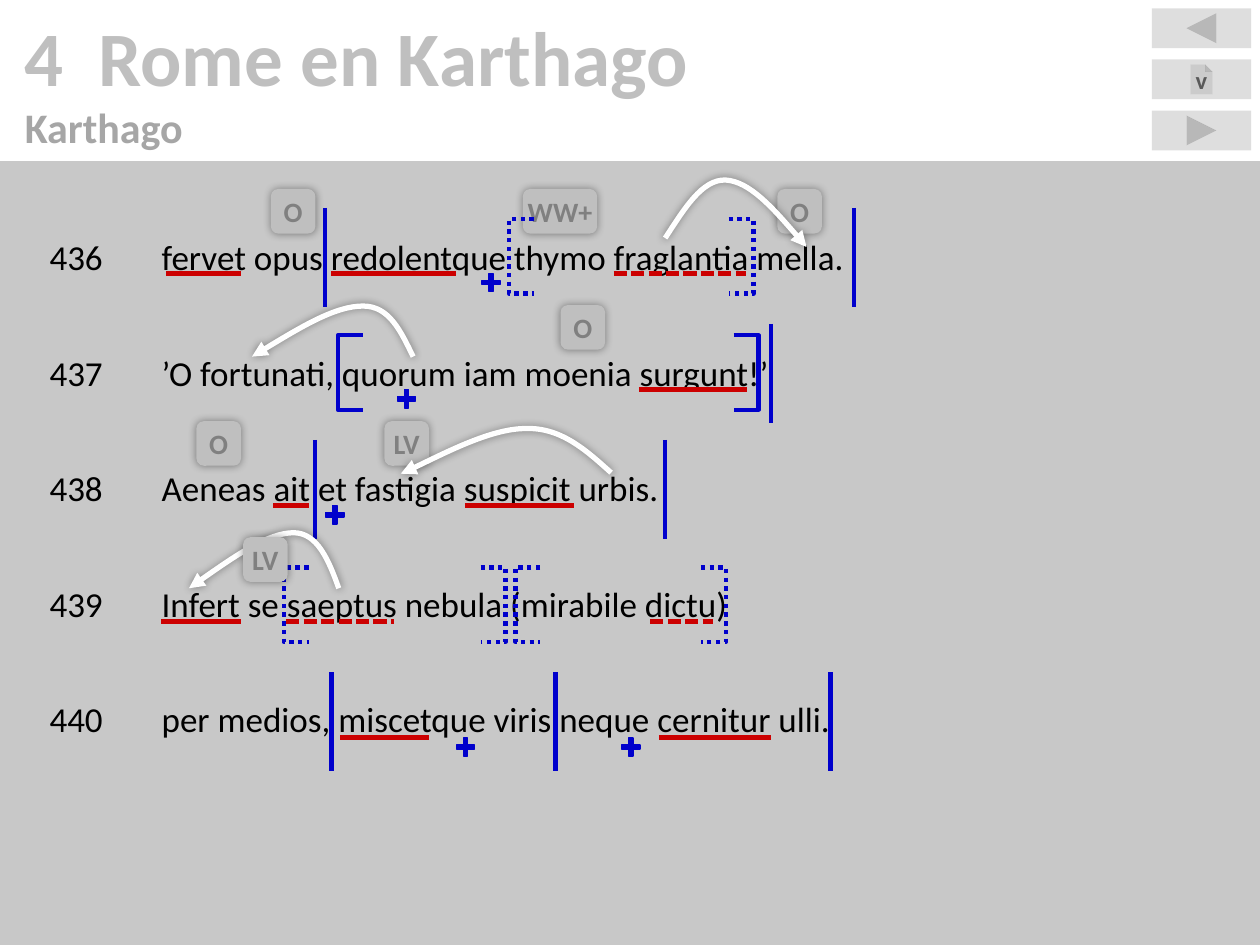
from lxml.etree import SubElement
from pptx import Presentation
from pptx.dml.color import RGBColor
from pptx.enum.dml import MSO_LINE as Dash
from pptx.enum.shapes import MSO_CONNECTOR as Connector, MSO_SHAPE as Preset
from pptx.enum.text import MSO_ANCHOR as Anchor, PP_ALIGN as Align
from pptx.oxml.ns import qn
from pptx.util import Cm, Pt

WHITE = RGBColor(0xFF, 0xFF, 0xFF)
BLACK = RGBColor(0, 0, 0)
SILVER = RGBColor(0xBF, 0xBF, 0xBF)
SUBTITLE_GRAY = RGBColor(0xA6, 0xA6, 0xA6)
BADGE_GRAY = RGBColor(0x80, 0x80, 0x80)
BUTTON_GRAY = RGBColor(0x59, 0x59, 0x59)
BLUE = RGBColor(0, 0, 0xCC)
RED = RGBColor(0xCC, 0, 0)

HEADINGS = [
    ("4  Rome en Karthago", {"size": Pt(44), "color": SILVER, "bold": True}),
    ("Karthago", {"size": Pt(24), "color": SUBTITLE_GRAY, "bold": True}),
]
BUTTONS = [
    (Preset.ACTION_BUTTON_BACK_OR_PREVIOUS, ""),
    (Preset.ACTION_BUTTON_DOCUMENT, "v"),
    (Preset.ACTION_BUTTON_FORWARD_OR_NEXT, ""),
]
VERSES = [
    ("436", "fervet opus redolentque thymo fraglantia mella.", {
        "divider": [(6.55,), (17.22,)],
        "underline": [(3.35, 4.85), (6.68, 9.19), (12.37, 15.04, Dash.SQUARE_DOT)],
        "plus": [(9.65,)],
        "badge": [("O", 5.46), ("O", 15.67), ("WW+", 10.54, 1.5)],
        "brackets": [(10.26, 15.19, Dash.ROUND_DOT)],
        "arrow": [((13.41, 4.8), (13.79, 4.22), (14.15, 3.61), (14.63, 3.63),
                   (15.11, 3.66), (15.7, 4.32), (16.26, 4.98))],
    }),
    ("437", "’O fortunati, quorum iam moenia surgunt!’", {
        "divider": [(15.54,)],
        "underline": [(12.88, 15.06)],
        "brackets": [(6.81, 15.29)],
        "plus": [(7.95,)],
        "arrow": [((8.33, 7.19), (8.08, 6.68), (7.85, 6.17), (7.32, 6.17),
                   (6.76, 6.17), (5.92, 6.68), (5.08, 7.19))],
        "badge": [("O", 11.3)],
    }),
    ("438", "Aeneas ait et fastigia suspicit urbis.", {
        "divider": [(6.35,), (13.41,)],
        "underline": [(5.51, 6.22), (9.37, 11.58)],
        "plus": [(6.5,)],
        "badge": [("O", 3.96), ("LV", 7.75)],
        "arrow": [((12.32, 9.53), (11.81, 9.07), (11.3, 8.61), (10.59, 8.64),
                   (9.88, 8.64), (8.51, 9.37), (8.08, 9.55))],
    }),
    ("439", "Infert se saeptus nebula (mirabile dictu)", {
        "underline": [(3.25, 4.85), (5.77, 7.95, Dash.SQUARE_DOT),
                      (13.11, 14.38, Dash.SQUARE_DOT)],
        "brackets": [(5.72, 10.19, Dash.ROUND_DOT), (10.39, 14.63, Dash.ROUND_DOT)],
        "arrow": [((6.83, 11.86), (6.63, 11.3), (6.4, 10.74), (5.92, 10.74),
                   (5.41, 10.74), (4.6, 11.3), (3.81, 11.86))],
        "badge": [("LV", 4.9)],
    }),
    ("440", "per medios, miscetque viris neque cernitur ulli.", {
        "divider": [(6.68,), (11.2,), (16.74,)],
        "underline": [(6.86, 8.64), (13.28, 15.54)],
        "plus": [(9.14,), (12.47,)],
    }),
]
FIRST_UNDERLINE, VERSE_PITCH = 5.51, 2.34
PANEL_TOP = 3.25

presentation = Presentation()
presentation.slide_width, presentation.slide_height = Cm(25.4), Cm(19.05)
slide = presentation.slides.add_slide(presentation.slide_layouts[6])
shapes = slide.shapes


def set_frame(shape, margins, anchor, wrap=True):
    left, top = margins
    values = {"margin_left": Cm(left), "margin_right": Cm(left),
              "margin_top": Cm(top), "margin_bottom": Cm(top),
              "vertical_anchor": anchor, "word_wrap": wrap}
    for name, value in values.items():
        setattr(shape.text_frame, name, value)


def write(shape, lines, align=Align.LEFT):
    frame = shape.text_frame
    for index, (text, font_values) in enumerate(lines):
        paragraph = frame.add_paragraph() if index else frame.paragraphs[0]
        paragraph.alignment = align
        run = paragraph.add_run()
        run.text = text
        run.font.name = "Calibri"
        for name, value in font_values.items():
            if name == "color":
                run.font.color.rgb = value
            else:
                setattr(run.font, name, value)


def add_filled(preset, left, top, width, height, color, opacity=100):
    shape = shapes.add_shape(preset, Cm(left), Cm(top), Cm(width), Cm(height))
    shape.shadow.inherit = False
    shape.fill.solid()
    shape.fill.fore_color.rgb = color
    shape.line.fill.background()
    if opacity < 100:
        color_element = shape.element.spPr.find(qn("a:solidFill"))[0]
        SubElement(color_element, qn("a:alpha"), val=str(opacity * 1000))
    return shape


def add_glow(shape):
    effects = shape.element.spPr.find(qn("a:effectLst"))
    shadow = SubElement(effects, qn("a:outerShdw"), blurRad=str(Pt(5)), dist="0",
                        dir="0", algn="ctr", rotWithShape="0")
    color = SubElement(shadow, qn("a:srgbClr"), val="000000")
    SubElement(color, qn("a:alpha"), val="40000")


def style_line(shape, color, width=2.5, dash=None):
    shape.line.color.rgb = color
    shape.line.width = Pt(width)
    if dash:
        shape.line.dash_style = dash


def add_line(start, end, color, dash=None):
    line = shapes.add_connector(Connector.STRAIGHT, *map(Cm, start + end))
    style_line(line, color, dash=dash)
    SubElement(line.element.spPr, qn("a:effectLst"))


def add_outline(points, color, width=2.5, dash=None):
    first, *rest = [(Cm(x), Cm(y)) for x, y in points]
    builder = shapes.build_freeform(*first)
    builder.add_line_segments(rest, close=False)
    outline = builder.convert_to_shape()
    outline.shadow.inherit = False
    outline.fill.background()
    style_line(outline, color, width, dash)
    return outline


def add_divider(base, x):
    add_line((x, base - 1.32), (x, base + 0.68), BLUE)


def add_underline(base, left, right, dash=None):
    add_line((left, base), (right, base), RED, dash)


def add_plus(base, left):
    plus = add_filled(Preset.MATH_PLUS, left, base - 0.06, 0.5, 0.5, BLUE)
    plus.adjustments[0] = 0.17
    style_line(plus, BLUE, 0)


def add_badge(base, text, left, width=0.9):
    badge = add_filled(Preset.ROUNDED_RECTANGLE, left, base - 1.7, width, 0.9, SILVER)
    add_glow(badge)
    set_frame(badge, (0, 0), Anchor.MIDDLE, wrap=False)
    write(badge, [(text, {"size": Pt(16), "color": BADGE_GRAY, "bold": True})], Align.CENTER)


def add_brackets(base, left, right, dash=None):
    top, bottom = base - 1.09, base + 0.41
    for x, tip in ((left, left + 0.5), (right, right - 0.5)):
        add_outline([(tip, top), (x, top), (x, bottom), (tip, bottom)], BLUE, dash=dash)


def add_arrow(base, *points):
    arrow = add_outline(points, WHITE, 3)
    properties = arrow.element.spPr
    segments = list(properties.iter(qn("a:lnTo")))
    for start in range(0, len(segments), 3):
        curve = SubElement(segments[start].getparent(), qn("a:cubicBezTo"))
        for segment in segments[start:start + 3]:
            curve.append(segment[0])
            segment.getparent().remove(segment)
    SubElement(properties.find(qn("a:ln")), qn("a:tailEnd"), type="triangle")
    add_glow(arrow)


MARKS = {"divider": add_divider, "underline": add_underline, "plus": add_plus,
         "badge": add_badge, "brackets": add_brackets, "arrow": add_arrow}

title = shapes.add_textbox(0, 0, Cm(25.4), Cm(PANEL_TOP))
set_frame(title, (0.5, 0.5), Anchor.MIDDLE)
write(title, HEADINGS)

panel = add_filled(Preset.RECTANGLE, 0, PANEL_TOP, 25.4, 19.05 - PANEL_TOP, SILVER, 85)
set_frame(panel, (1, 1.5), Anchor.TOP)
write(panel, [(f"{number}\t{verse}", {"size": Pt(20), "color": BLACK})
              for number, verse, _ in VERSES])
for paragraph in panel.text_frame.paragraphs:
    paragraph.space_after = Pt(42)
    tabs = SubElement(paragraph._p.get_or_add_pPr(), qn("a:tabLst"))
    SubElement(tabs, qn("a:tab"), pos=str(Cm(2.26)), algn="l")

for index, (preset, label) in enumerate(BUTTONS):
    button = add_filled(preset, 23.22, 0.17 + index * 1.03, 2, 0.8, SILVER, 50)
    if label:
        set_frame(button, (0.25, 0.13), Anchor.MIDDLE)
        write(button, [(label, {"size": Pt(14), "color": BUTTON_GRAY, "bold": True})],
              Align.CENTER)

for index, (_, _, marks) in enumerate(VERSES):
    for kind, items in marks.items():
        for item in items:
            MARKS[kind](FIRST_UNDERLINE + index * VERSE_PITCH, *item)

presentation.save("out.pptx")
